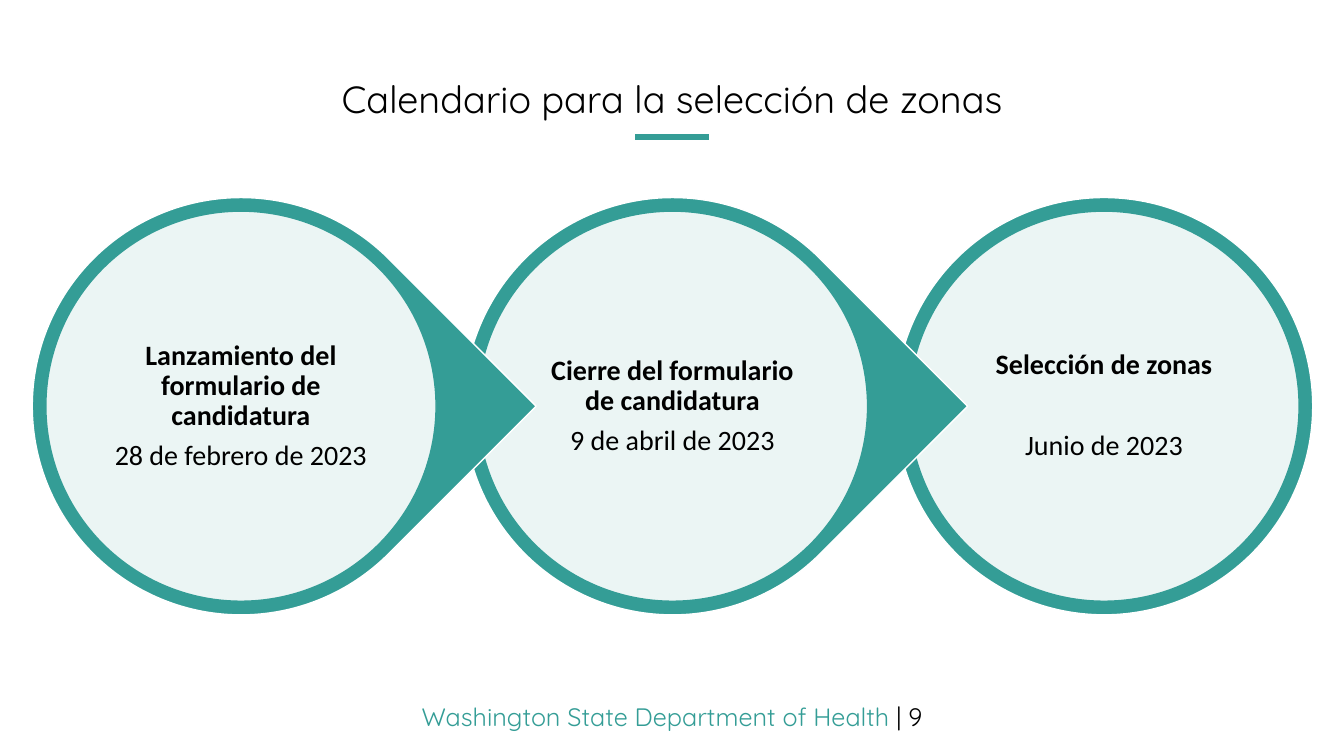
"""Build the zone selection calendar slide."""
from lxml import etree
from pptx import Presentation
from pptx import util as u
from pptx.dml.color import RGBColor
from pptx.enum import shapes, text
from pptx.oxml.ns import qn

COLORS = {"teal": "349D96", "white": "FFFFFF", "black": "000000"}
STEPS = [
    ("Lanzamiento del formulario de candidatura", "28 de febrero de 2023", 7),
    ("Cierre del formulario de candidatura", "9 de abril de 2023", 7),
    ("Selección de zonas", "Junio de 2023", 36),
]
FIRST_CENTER, CENTER_Y, PITCH = 2.39, 4.03, 4.28
OUTER, INNER, LABEL = 4.14, 3.87, 2.76


def color(name):
    """Return the named colour."""
    return RGBColor.from_string(COLORS[name])


def format_run(run, size, font, color_name, bold=False):
    """Set the character format of a run."""
    run.font.size = u.Pt(size)
    run.font.name = font
    run.font.bold = bold
    run.font.color.rgb = color(color_name)


def square(center_x, size):
    """Return the box of a square centred on the row of steps."""
    return (u.Inches(center_x - size / 2), u.Inches(CENTER_Y - size / 2),
            u.Inches(size), u.Inches(size))


def add_disc(slide, kind, center_x, size, fill, line, opacity=100):
    """Add a round shape with a thin outline."""
    shape = slide.shapes.add_shape(kind, *square(center_x, size))
    shape.shadow.inherit = False
    shape.fill.solid()
    shape.fill.fore_color.rgb = color(fill)
    if opacity < 100:
        fill_color = shape.fill._xPr.find(qn("a:solidFill"))[0]
        etree.SubElement(fill_color, qn("a:alpha"), val=str(opacity * 1000))
    shape.line.color.rgb = color(line)
    shape.line.width = u.Pt(1)
    return shape


def add_label(slide, center_x, heading, date, gap):
    """Add the heading and date of a step."""
    frame = slide.shapes.add_textbox(*square(center_x, LABEL)).text_frame
    frame.word_wrap = True
    frame.vertical_anchor = text.MSO_ANCHOR.MIDDLE
    frame.margin_left = frame.margin_right = u.Inches(0.03)
    frame.margin_top = frame.margin_bottom = u.Inches(0.03)
    frame.text = f"{heading}\n{date}"
    for paragraph, bold, space in zip(frame.paragraphs, (True, False), (gap, 7)):
        paragraph.alignment = text.PP_ALIGN.CENTER
        paragraph.line_spacing = 0.9
        paragraph.space_after = u.Pt(space)
        format_run(paragraph.runs[0], 20, "Calibri", "black", bold)


def add_step(slide, index):
    """Add one step, pointing right unless it is the last."""
    center_x = FIRST_CENTER + index * PITCH
    kinds = shapes.MSO_SHAPE
    is_last = index == len(STEPS) - 1
    outer_kind = kinds.OVAL if is_last else kinds.TEAR
    outer = add_disc(slide, outer_kind, center_x, OUTER, "teal", "white")
    outer.rotation = 0 if is_last else 45
    add_disc(slide, kinds.OVAL, center_x, INNER, "white", "teal", 90)
    add_label(slide, center_x, *STEPS[index])


def add_title(slide, wording):
    """Fill and place the title placeholder."""
    title = slide.shapes.title
    title.left, title.top = u.Inches(0), u.Inches(0.74)
    title.width, title.height = u.Inches(13.33), u.Inches(0.53)
    frame = title.text_frame
    frame.text = wording
    frame.vertical_anchor = text.MSO_ANCHOR.MIDDLE
    paragraph = frame.paragraphs[0]
    paragraph.alignment = text.PP_ALIGN.CENTER
    paragraph.line_spacing = 0.9
    format_run(paragraph.runs[0], 27, "Quicksand", "black")


def add_underline(slide):
    """Add the short rule under the title."""
    line = slide.shapes.add_connector(
        shapes.MSO_CONNECTOR.STRAIGHT,
        u.Inches(6.3), u.Inches(1.36), u.Inches(7.03), u.Inches(1.36))
    line.line.color.rgb = color("teal")
    line.line.width = u.Pt(4)
    etree.SubElement(line._element.spPr, qn("a:effectLst"))


def add_footer(slide, organization, number):
    """Add the organization name and page number."""
    frame = slide.shapes.add_textbox(
        u.Inches(0), u.Inches(6.91), u.Inches(13.33), u.Inches(0.4)).text_frame
    frame.word_wrap = True
    paragraph = frame.paragraphs[0]
    paragraph.alignment = text.PP_ALIGN.CENTER
    for wording, name in ((f"{organization} ", "teal"), (f"| {number}", "black")):
        run = paragraph.add_run()
        run.text = wording
        format_run(run, 18, "Quicksand", name)


def main():
    """Build and save the slide."""
    presentation = Presentation()
    presentation.slide_width = u.Inches(13.33)
    presentation.slide_height = u.Inches(7.5)
    slide = presentation.slides.add_slide(presentation.slide_layouts[5])
    add_underline(slide)
    add_footer(slide, "Washington State Department of Health", 9)
    add_title(slide, "Calendario para la selección de zonas")
    for index in reversed(range(len(STEPS))):
        add_step(slide, index)
    presentation.save("out.pptx")


if __name__ == "__main__":
    main()
